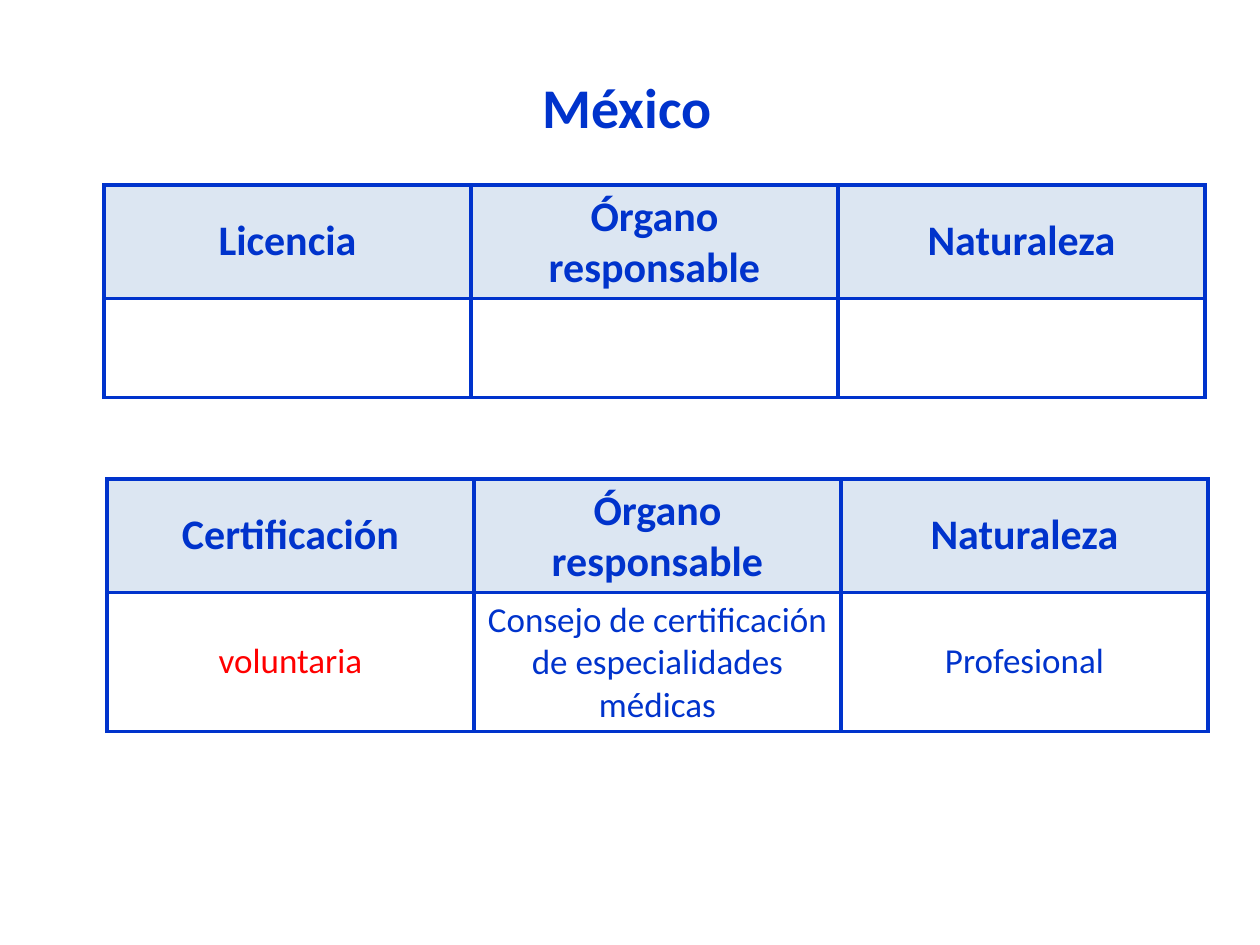
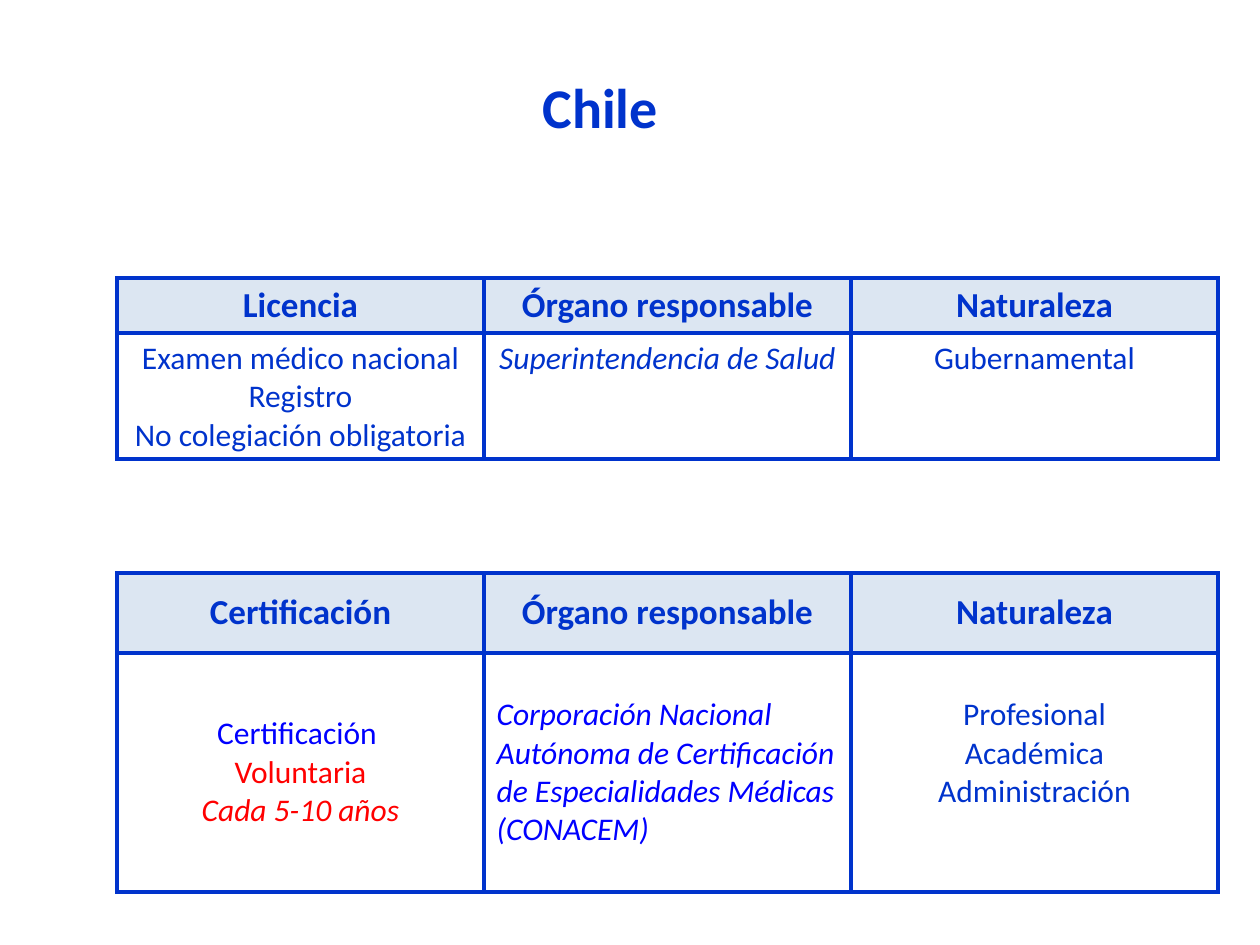
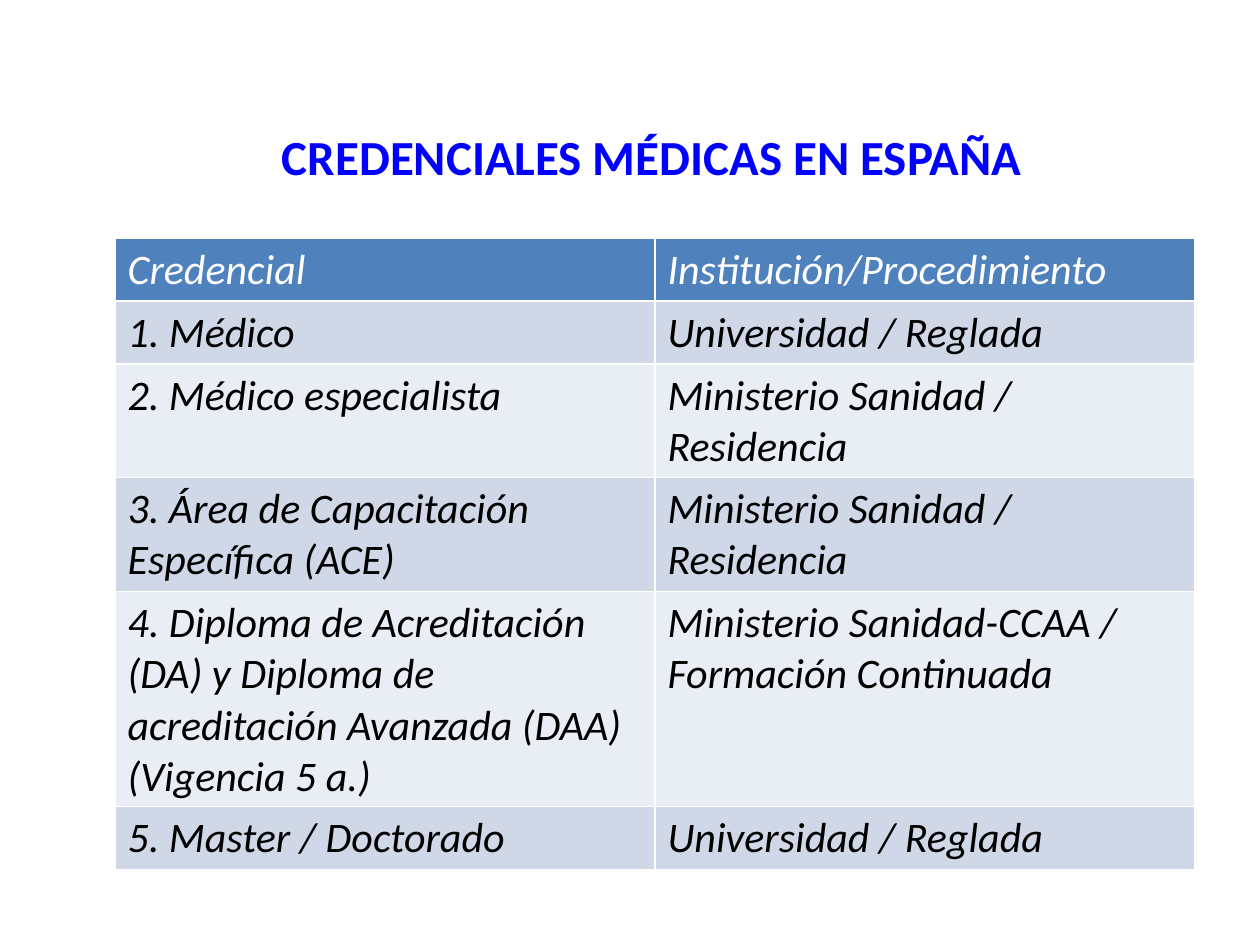
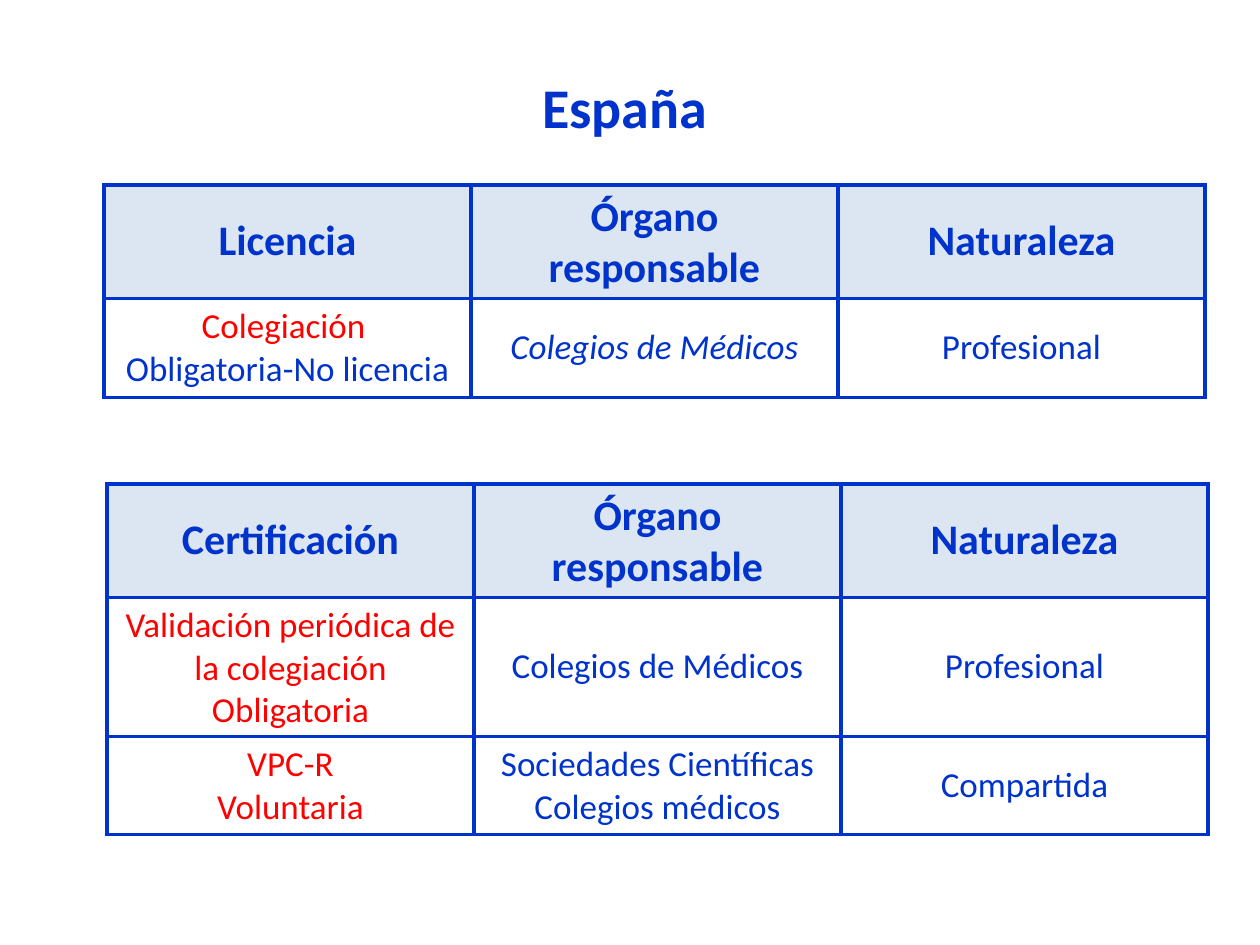
from lxml import etree
from pptx import Presentation
from pptx.dml.color import RGBColor
from pptx.enum.text import MSO_ANCHOR, PP_ALIGN
from pptx.oxml.ns import qn
from pptx.util import Pt

TOP, MIDDLE = MSO_ANCHOR.TOP, MSO_ANCHOR.MIDDLE
LEFT, CENTER = PP_ALIGN.LEFT, PP_ALIGN.CENTER

PX = 914400 / 126
SLIDE_SIZE = (1260, 945)
FONT = "Calibri"
COLORS = {
    "blue": "0033CC", "bright": "0000FF", "red": "FF0000", "black": "000000",
    "white": "FFFFFF", "pale": "DCE6F2", "header": "4F81BD",
    "odd": "D0D8E8", "even": "E9EDF4",
}
COUNTRY_COLUMNS = [367, 367, 367]
CREDENTIAL_COLUMNS = [540, 540]
BLANK_LINE = 38


def red(text, italic=False):
    return {"text": text, "color": "red", "italic": italic}


def bright(text, italic=False):
    return {"text": text, "color": "bright", "italic": italic}


def italic(text):
    return {"text": text, "italic": True}


def requirement(kind, at, heights, rows, sizes=(24, 20), anchor=MIDDLE, **changes):
    return {"rows": [[kind, "Órgano responsable", "Naturaleza"]] + rows,
            "at": at, "heights": heights, "sizes": sizes, "anchor": anchor, **changes}


COUNTRIES = {
    "México": {"width": 198, "tables": [
        requirement("Licencia", (104, 185), [113, 99], [["", "", ""]]),
        requirement("Certificación", (107, 479), [113, 139], [
            [red("voluntaria"),
             "Consejo de certificación de especialidades médicas",
             "Profesional"]]),
    ]},
    "Chile": {"width": 142, "tables": [
        requirement("Licencia", (117, 278), [55, 126], [
            [["Examen médico nacional", "Registro", "No colegiación obligatoria"],
             italic("Superintendencia de Salud"),
             "Gubernamental"]], (20, 18), TOP),
        requirement("Certificación", (117, 573), [80, 239], [
            [[bright("Certificación "), red("Voluntaria"), red("Cada 5-10 años", True)],
             [bright("Corporación Nacional Autónoma de Certificación", True),
              bright("de Especialidades Médicas (CONACEM)", True)],
             ["Profesional", "Académica", "Administración"]]],
            (20, 18), left_cells=[(1, 1)], raised_cells=[(1, 2)]),
    ]},
    "España": {"width": 192, "tables": [
        requirement("Licencia", (104, 185), [113, 99], [
            [[red("Colegiación "), "Obligatoria-No licencia"],
             italic("Colegios de Médicos"),
             "Profesional"]]),
        requirement("Certificación", (107, 484), [113, 139, 98], [
            [[red("Validación periódica de la colegiación"), red("Obligatoria")],
             "Colegios de Médicos",
             "Profesional"],
            [[red("VPC-R"), red("Voluntaria")],
             ["Sociedades Científicas", "Colegios médicos"],
             "Compartida"]]),
    ]},
}

CREDENTIALS_TITLE = "CREDENCIALES MÉDICAS EN ESPAÑA"
CREDENTIALS = [
    ("Credencial", "Institución/Procedimiento"),
    ("1. Médico", "Universidad / Reglada"),
    ("2. Médico especialista", "Ministerio Sanidad / Residencia"),
    ("3. Área de Capacitación Específica (ACE)", "Ministerio Sanidad / Residencia"),
    ("4. Diploma de Acreditación (DA) y Diploma de acreditación Avanzada (DAA) "
     "(Vigencia 5 a.)", "Ministerio Sanidad-CCAA / Formación Continuada"),
    ("5. Master / Doctorado", "Universidad / Reglada"),
]
CREDENTIAL_HEIGHTS = [62, 63, 113, 114, 215, 62]


def emu(*lengths):
    return [round(length * PX) for length in lengths]


def rgb(color):
    return RGBColor.from_string(COLORS[color])


def set_font(paragraph, size, color, bold=False, slanted=False):
    font = paragraph.font
    font.name, font.size = FONT, Pt(size)
    font.bold, font.italic = bold, slanted
    font.color.rgb = rgb(color)


def add_title(slide, title, box, size, color, align=LEFT, wrap=False):
    frame = slide.shapes.add_textbox(*emu(*box)).text_frame
    frame.word_wrap = wrap
    paragraph = frame.paragraphs[0]
    paragraph.text, paragraph.alignment = title, align
    set_font(paragraph, size, color, bold=True)


def set_borders(cell, color, width):
    properties = cell._tc.get_or_add_tcPr()
    for side in ("lnL", "lnR", "lnT", "lnB"):
        line = etree.SubElement(properties, qn(f"a:{side}"), w=str(Pt(width)))
        fill = etree.SubElement(line, qn("a:solidFill"))
        etree.SubElement(fill, qn("a:srgbClr"), val=COLORS[color])


def fill_cell(cell, content, size, color, align, anchor, bold=False, slanted=False):
    lines = content if isinstance(content, list) else [content]
    cell.vertical_anchor = anchor
    for index, line in enumerate(lines):
        line = line if isinstance(line, dict) else {"text": line}
        frame = cell.text_frame
        paragraph = frame.add_paragraph() if index else frame.paragraphs[0]
        paragraph.text, paragraph.alignment = line["text"], align
        set_font(paragraph, size, line.get("color", color), bold,
                 line.get("italic", slanted))


def add_grid(slide, at, columns, heights, border, border_width):
    table = slide.shapes.add_table(
        len(heights), len(columns), *emu(*at, sum(columns), sum(heights))).table
    table.first_row = table.horz_banding = False
    for column, width in zip(table.columns, emu(*columns)):
        column.width = width
    for row, height in zip(table.rows, emu(*heights)):
        row.height = height
    for cell in table.iter_cells():
        set_borders(cell, border, border_width)
    return table


def add_requirement(slide, part):
    table = add_grid(slide, part["at"], COUNTRY_COLUMNS, part["heights"], "blue", 2.25)
    header_size, body_size = part["sizes"]
    for r, row in enumerate(part["rows"]):
        for c, content in enumerate(row):
            cell = table.cell(r, c)
            if r == 0:
                cell.fill.solid()
                cell.fill.fore_color.rgb = rgb("pale")
                fill_cell(cell, content, header_size, "blue", CENTER, MIDDLE, bold=True)
                continue
            cell.fill.background()
            align = LEFT if (r, c) in part.get("left_cells", []) else CENTER
            fill_cell(cell, content, body_size, "blue", align, part["anchor"])
            if (r, c) in part.get("raised_cells", []):
                cell.margin_bottom += emu(BLANK_LINE)[0]


def add_country(slide, country):
    part = COUNTRIES[country]
    add_title(slide, country, (530, 66, part["width"], 80), 32, "blue")
    for table in part["tables"]:
        add_requirement(slide, table)


def add_credentials(slide):
    add_title(slide, CREDENTIALS_TITLE, (199, 120, 905, 72), 28, "bright", CENTER, True)
    table = add_grid(slide, (115, 238), CREDENTIAL_COLUMNS, CREDENTIAL_HEIGHTS, "white", 1)
    for r, row in enumerate(CREDENTIALS):
        band = "header" if r == 0 else "odd" if r % 2 else "even"
        for c, text in enumerate(row):
            cell = table.cell(r, c)
            cell.fill.solid()
            cell.fill.fore_color.rgb = rgb(band)
            fill_cell(cell, text, 24, "black" if r else "white", LEFT, TOP, slanted=True)


def main():
    deck = Presentation()
    deck.slide_width, deck.slide_height = emu(*SLIDE_SIZE)
    blank = deck.slide_layouts[6]
    for country in ("México", "Chile"):
        add_country(deck.slides.add_slide(blank), country)
    add_credentials(deck.slides.add_slide(blank))
    add_country(deck.slides.add_slide(blank), "España")
    deck.save("out.pptx")


if __name__ == "__main__":
    main()
